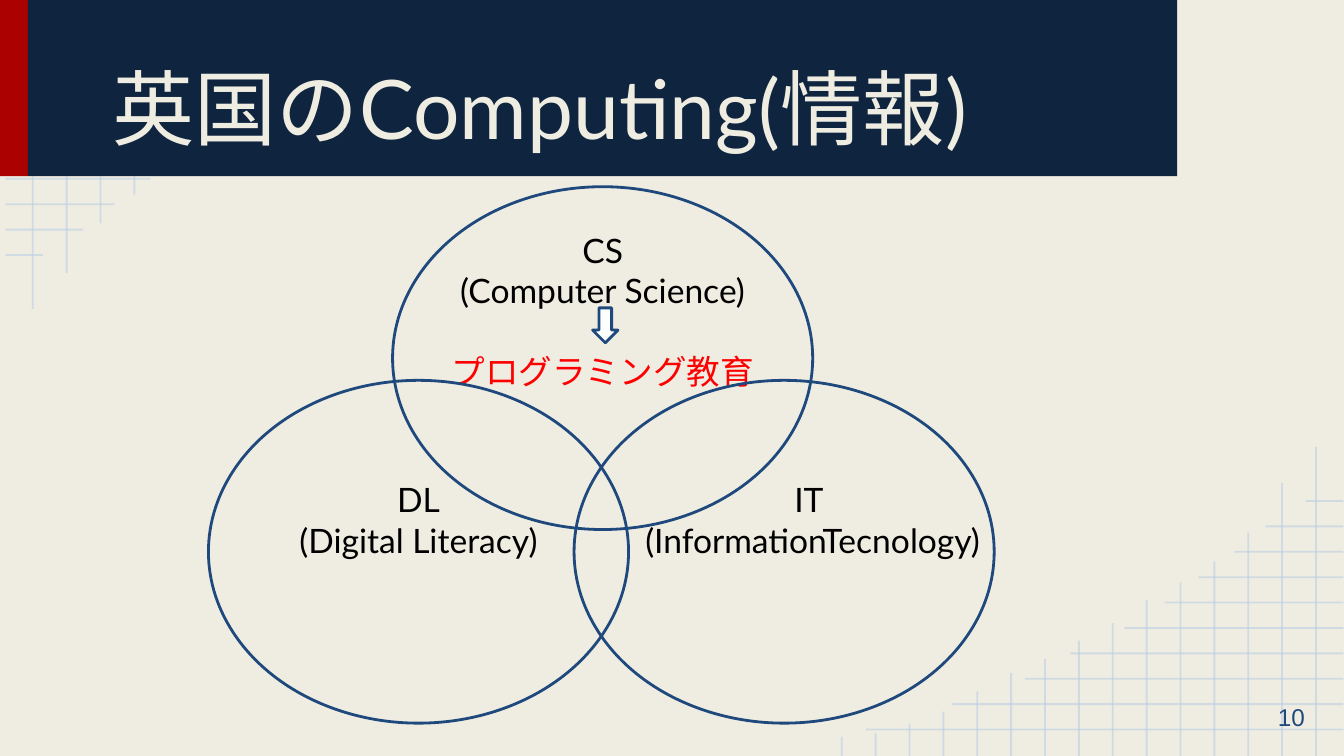
from dataclasses import dataclass

from lxml import etree
from pptx import Presentation
from pptx import util as u
from pptx.dml.color import RGBColor
from pptx.enum import shapes, text
from pptx.oxml.ns import qn

CREAM, NAVY, RED = "EFEDE2", "0F243E", "AB0101"
BLUE, PALE_BLUE = "1F497D", "B7CCE4"
WIDTH, HEIGHT = 25.4, 14.29
CIRCLE_WIDTH, CIRCLE_HEIGHT = 7.94, 6.48


@dataclass
class Box:
    left: float
    top: float
    width: float
    height: float

    def lengths(self) -> list:
        return [u.Cm(v) for v in (self.left, self.top, self.width, self.height)]


@dataclass
class Subject:
    circle_left: float
    circle_top: float
    label: Box
    lines: tuple


SUBJECTS = [
    Subject(7.42, 3.53, Box(7.87, 4.09, 7.04, 4.45), ("CS", "(Computer Science)")),
    Subject(10.85, 7.19, Box(11.4, 8.81, 7.92, 4.45), ("IT ", "(InformationTecnology)")),
    Subject(3.94, 7.19, Box(4.39, 8.81, 7.04, 4.01), ("DL", "(Digital Literacy)")),
]

# Grid lines shorten away from the corner
ROW_ENDS = [9.12, 7.49, 6.12, 5.26, 4.24, 3.48, 2.84, 2.16, 1.57, 0.81]
COLUMN_ENDS = [5.84, 5.16, 4.22, 3.68, 3.28, 2.95, 2.51, 2.18,
               1.83, 1.57, 1.22, 0.84, 0.61, 0.43, 0.36]


def rgb(color: str) -> RGBColor:
    return RGBColor.from_string(color)


def add_grid_line(slide, x1: float, y1: float, x2: float, y2: float) -> None:
    line = slide.shapes.add_connector(
        shapes.MSO_CONNECTOR.STRAIGHT, u.Cm(x1), u.Cm(y1), u.Cm(x2), u.Cm(y2))
    line.line.color.rgb = rgb(PALE_BLUE)
    line.line.width = u.Pt(1)
    properties = line.element.spPr
    color = properties.find(".//" + qn("a:srgbClr"))
    etree.SubElement(color, qn("a:alpha"), val="54000")
    etree.SubElement(properties, qn("a:effectLst"))


def add_corner_grid(slide, rotated: bool) -> None:
    def place(x: float, y: float) -> tuple:
        return (25.49 - x, HEIGHT - y) if rotated else (x, y)

    for i, end in enumerate(ROW_ENDS):
        y = 0.5 + 0.48 * i
        add_grid_line(slide, *place(0.1, y), *place(end, y))
    for i, end in enumerate(COLUMN_ENDS):
        x = 0.62 + 0.64 * i
        add_grid_line(slide, *place(x, end), *place(x, 0))


def add_figure(slide, kind, box: Box, fill: str = "", line: str = "") -> None:
    figure = slide.shapes.add_shape(kind, *box.lengths())
    figure.shadow.inherit = False
    if fill:
        figure.fill.solid()
        figure.fill.fore_color.rgb = rgb(fill)
    else:
        figure.fill.background()
    if line:
        figure.line.color.rgb = rgb(line)
        figure.line.width = u.Pt(1.5)
    else:
        figure.line.fill.background()


def write(frame, *lines: str, size: float = 18, font: str = "Lato", color: str = "000000",
          align=text.PP_ALIGN.CENTER, anchor=text.MSO_ANCHOR.TOP) -> None:
    frame.word_wrap = True
    frame.auto_size = text.MSO_AUTO_SIZE.NONE
    frame.vertical_anchor = anchor
    frame.margin_left = frame.margin_right = u.Cm(0.25)
    frame.margin_top = frame.margin_bottom = u.Cm(0.25)
    for i, words in enumerate(lines):
        paragraph = frame.add_paragraph() if i else frame.paragraphs[0]
        paragraph.alignment = align
        run = paragraph.add_run()
        run.text = words
        run.font.size = u.Pt(size)
        run.font.name = font
        run.font.color.rgb = rgb(color)


def add_subject(slide, subject: Subject) -> object:
    circle = Box(subject.circle_left, subject.circle_top, CIRCLE_WIDTH, CIRCLE_HEIGHT)
    add_figure(slide, shapes.MSO_SHAPE.OVAL, circle, line=BLUE)
    label = slide.shapes.add_textbox(*subject.label.lengths()).text_frame
    write(label, *subject.lines)
    return label


def main() -> None:
    deck = Presentation()
    deck.slide_width, deck.slide_height = u.Cm(WIDTH), u.Cm(HEIGHT)
    slide = deck.slides.add_slide(deck.slide_layouts[5])
    slide.background.fill.solid()
    slide.background.fill.fore_color.rgb = rgb(CREAM)

    # Corner grids and title band
    add_corner_grid(slide, rotated=False)
    add_corner_grid(slide, rotated=True)
    add_figure(slide, shapes.MSO_SHAPE.RECTANGLE, Box(0, 0, 0.53, 3.33), fill=RED)
    add_figure(slide, shapes.MSO_SHAPE.RECTANGLE, Box(0.53, 0, 21.72, 3.33), fill=NAVY)

    # Title, brought in front of the band
    title = slide.shapes.title
    title.left, title.top, title.width, title.height = Box(1.88, 0.38, 20.32, 2.82).lengths()
    write(title.text_frame, "英国のComputing(情報)", size=44, color=CREAM,
          align=text.PP_ALIGN.LEFT, anchor=text.MSO_ANCHOR.BOTTOM)
    slide.shapes.element.append(title.element)

    # Page number
    page_number = slide.shapes.add_textbox(*Box(23.39, 12.83, 1.52, 1.45).lengths())
    write(page_number.text_frame, "10", size=13, font="Arial", color=BLUE,
          align=text.PP_ALIGN.RIGHT, anchor=text.MSO_ANCHOR.MIDDLE)

    # Overlapping subjects
    science, *_ = [add_subject(slide, subject) for subject in SUBJECTS]

    # Programming education follows from computer science
    programming = science.add_paragraph()
    programming.alignment = text.PP_ALIGN.CENTER
    programming.space_before = u.Pt(21.6)
    programming.text = "プログラミング教育"
    programming.font.size = u.Pt(18)
    programming.runs[0].font.size = u.Pt(18)
    programming.runs[0].font.name = "Lato"
    programming.runs[0].font.color.rgb = rgb("FF0000")
    add_figure(slide, shapes.MSO_SHAPE.DOWN_ARROW, Box(11.2, 5.82, 0.48, 0.66),
               fill="FDFFFF", line=BLUE)

    deck.save("out.pptx")


if __name__ == "__main__":
    main()
